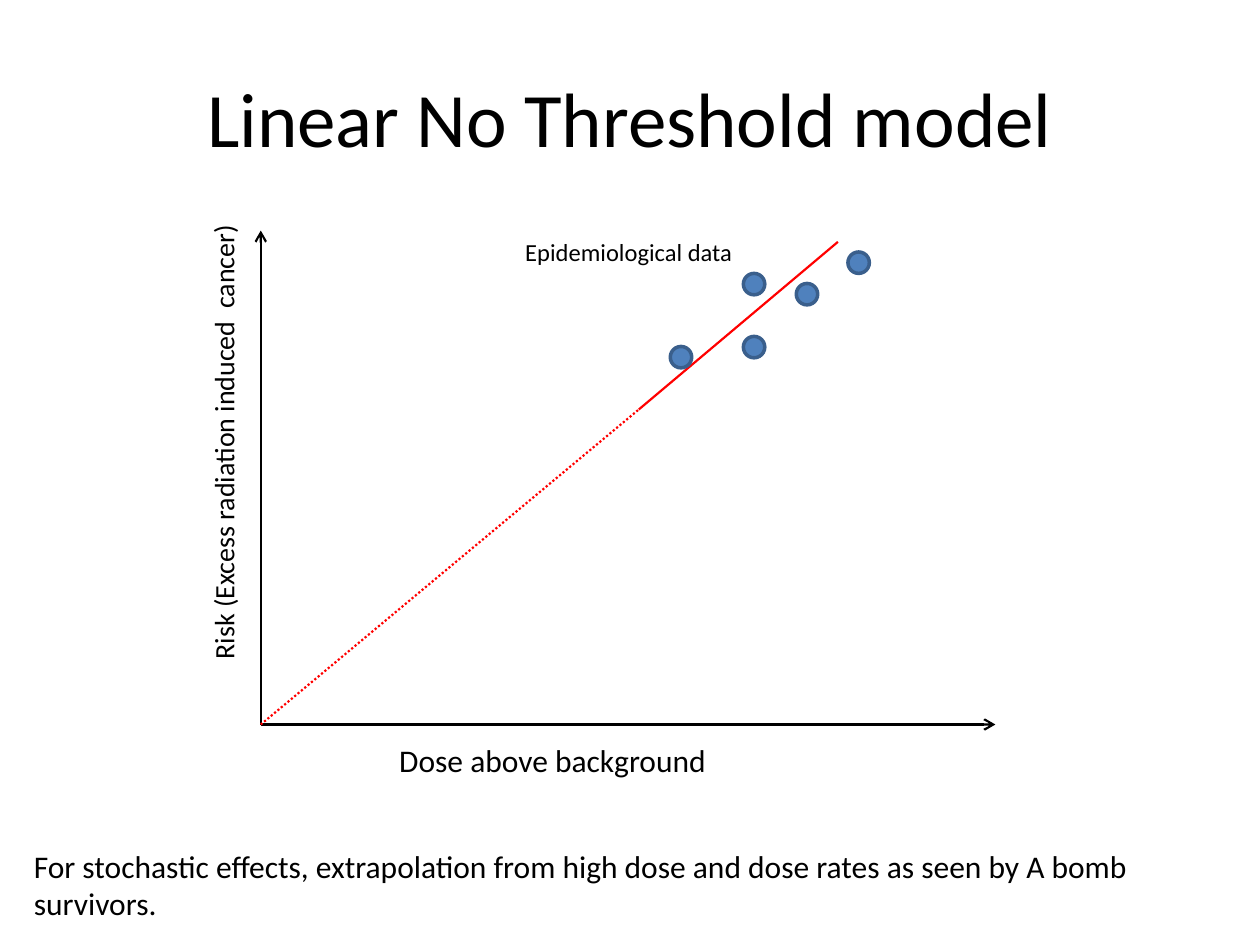
from lxml.etree import SubElement
from pptx import Presentation
from pptx.dml.color import RGBColor
from pptx.enum.dml import MSO_LINE_DASH_STYLE as DASH
from pptx.enum.shapes import MSO_CONNECTOR, MSO_SHAPE
from pptx.enum.text import MSO_ANCHOR, PP_ALIGN
from pptx.oxml.ns import qn
from pptx.util import Inches, Pt

COLORS = {"text": "000000", "axis": "000000", "trend": "FF0000",
          "point": "4F81BD", "point_edge": "3A5F8C"}
FONT = "Calibri"

# Content: text, box (left, top, width, height), size, options
TEXTS = [
    ("Linear No Threshold model", (0.5, 0.3, 9, 1.25), 44,
     {"align": PP_ALIGN.CENTER, "anchor": MSO_ANCHOR.MIDDLE}),
    ("Risk (Excess radiation induced  cancer)", (-0.06, 3.31, 3.67, 0.37), 16,
     {"rotation": 270}),
    ("Dose above background", (3.07, 5.83, 3.08, 0.4), 18, {}),
    ("Epidemiological data", (4.07, 1.83, 2.08, 0.34), 14, {}),
    ("For stochastic effects, extrapolation from high dose and dose rates "
     "as seen by A bomb survivors.", (0.17, 6.67, 9.67, 0.71), 18, {}),
]

# Graph geometry
ORIGIN = (2.07, 5.75)
RISK_END = (2.07, 1.83)
DOSE_END = (7.9, 5.75)
DATA_START = (5.07, 3.25)
TREND_END = (6.65, 1.92)
LINES = [
    (ORIGIN, RISK_END, "axis", {"arrow": True}),
    (ORIGIN, DOSE_END, "axis", {"arrow": True}),
    (DATA_START, TREND_END, "trend", {}),
    (ORIGIN, DATA_START, "trend", {"dash": DASH.ROUND_DOT}),
]
POINT_SIZE = 0.17
POINTS = [(5.32, 2.75), (5.9, 2.67), (6.73, 2), (5.9, 2.17), (6.32, 2.25)]


def color(name):
    return RGBColor.from_string(COLORS[name])


def add_text(slide, text, box, size, align=PP_ALIGN.LEFT,
             anchor=MSO_ANCHOR.TOP, rotation=0):
    shape = slide.shapes.add_textbox(*map(Inches, box))
    shape.rotation = rotation
    frame = shape.text_frame
    frame.word_wrap = True
    frame.vertical_anchor = anchor
    paragraph = frame.paragraphs[0]
    paragraph.alignment = align
    run = paragraph.add_run()
    run.text = text
    run.font.name = FONT
    run.font.size = Pt(size)
    run.font.color.rgb = color("text")


def add_line(slide, start, end, color_name, arrow=False, dash=None):
    connector = slide.shapes.add_connector(
        MSO_CONNECTOR.STRAIGHT, *map(Inches, start + end))
    line = connector.line
    line.color.rgb = color(color_name)
    line.width = Pt(1.25)
    if dash:
        line.dash_style = dash
    properties = connector._element.spPr
    if arrow:
        SubElement(properties.find(qn("a:ln")), qn("a:tailEnd"), type="arrow")
    SubElement(properties, qn("a:effectLst"))


def add_point(slide, left, top):
    shape = slide.shapes.add_shape(
        MSO_SHAPE.OVAL, *map(Inches, (left, top, POINT_SIZE, POINT_SIZE)))
    shape.shadow.inherit = False
    shape.fill.solid()
    shape.fill.fore_color.rgb = color("point")
    shape.line.color.rgb = color("point_edge")
    shape.line.width = Pt(2)


def main():
    presentation = Presentation()
    presentation.slide_width = Inches(10)
    presentation.slide_height = Inches(7.5)
    slide = presentation.slides.add_slide(presentation.slide_layouts[6])

    # Axes and trend line
    for start, end, color_name, options in LINES:
        add_line(slide, start, end, color_name, **options)

    # Epidemiological data points
    for left, top in POINTS:
        add_point(slide, left, top)

    # Title, labels and note
    for text, box, size, options in TEXTS:
        add_text(slide, text, box, size, **options)

    presentation.save("out.pptx")


if __name__ == "__main__":
    main()
